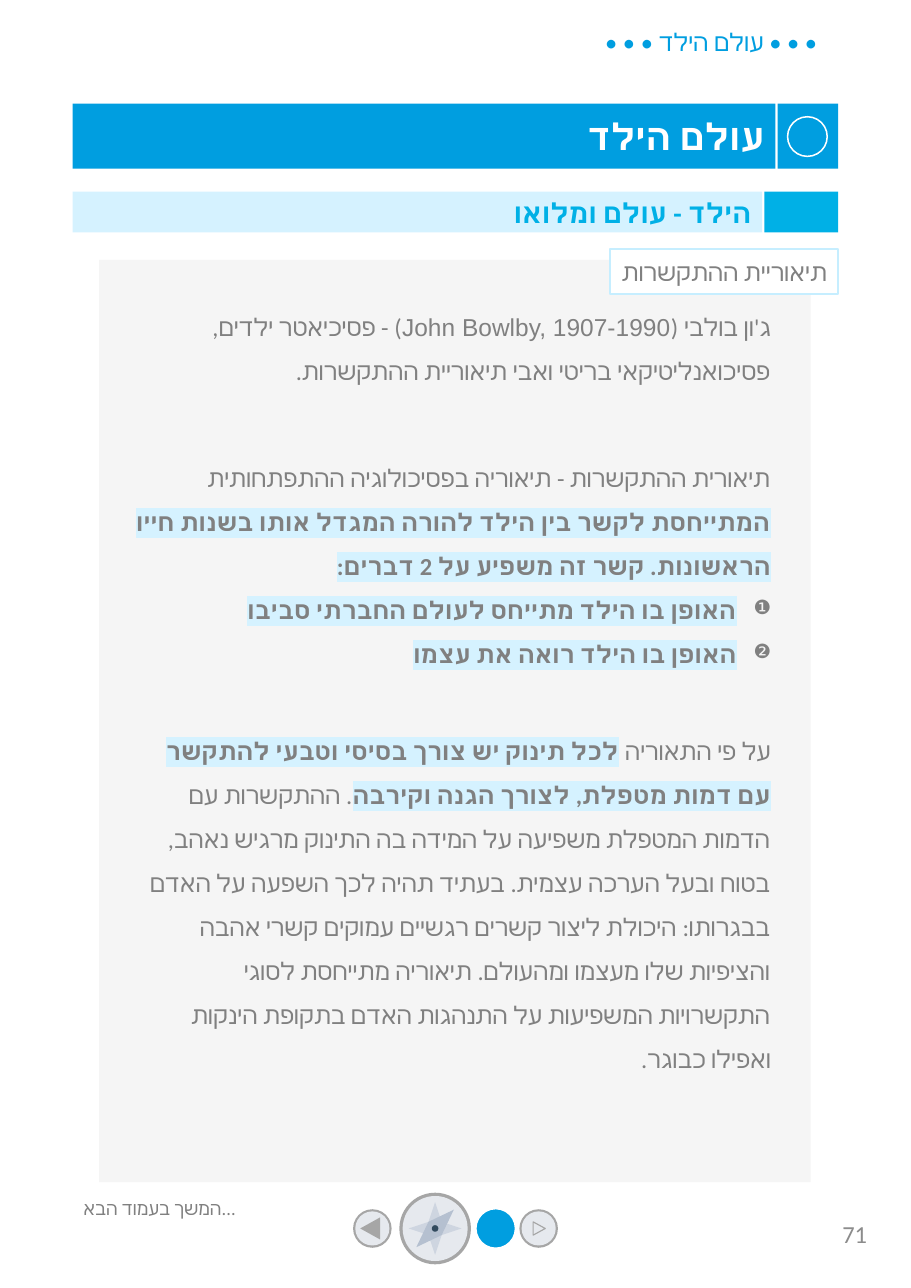
from lxml import etree
from pptx import Presentation
from pptx.dml.color import RGBColor
from pptx.enum.shapes import MSO_SHAPE
from pptx.enum.text import MSO_ANCHOR, MSO_AUTO_SIZE, PP_ALIGN
from pptx.oxml.ns import qn
from pptx.util import Inches, Pt

RECT, OVAL = MSO_SHAPE.RECTANGLE, MSO_SHAPE.OVAL
TOP, MIDDLE = MSO_ANCHOR.TOP, MSO_ANCHOR.MIDDLE
LEFT, RIGHT = PP_ALIGN.LEFT, PP_ALIGN.RIGHT
NO_FIT = MSO_AUTO_SIZE.NONE

# Palette and fonts
BLUE, CYAN, PALE, WHITE = "009EE0", "00B0E6", "D5F2FF", "FFFFFF"
TEXT, PANEL, RING, DISC = "808080", "F5F5F5", "A6A6A6", "E6E9EE"
MONO, BODY, LATIN = "Noto Sans Mono", "Calibri", "Arial"
# Letter spacing in hundredths of a point
PLAIN_SPACING, BOLD_SPACING = 5, 8

# Content
HEADER = "• • • עולם הילד • • •"
TITLE = "עולם הילד"
SUBTITLE = "הילד - עולם ומלואו"
TOPIC = "תיאוריית ההתקשרות"
CONTINUED = "המשך בעמוד הבא..."
PAGE_NUMBER = "71"
# Paragraphs: bullet, space after, runs of (text, font, highlighted)
THEORY = [
    ("", 41, [
        ("ג'ון בולבי (", BODY, False),
        ("John Bowlby, 1907-1990) - פסיכיאטר ילדים, פסיכואנליטיקאי בריטי "
         "ואבי תיאוריית ההתקשרות.", LATIN, False)]),
    ("", 0, [
        ("תיאורית ההתקשרות - תיאוריה בפסיכולוגיה ההתפתחותית ", LATIN, False),
        ("המתייחסת לקשר בין הילד להורה המגדל אותו בשנות חייו הראשונות. "
         "קשר זה משפיע על 2 דברים:", LATIN, True)]),
    ("❶", 0, [("האופן בו הילד מתייחס לעולם החברתי סביבו", LATIN, True)]),
    ("❷", 34.5, [("האופן בו הילד רואה את עצמו", LATIN, True)]),
    ("", 0, [
        ("על פי התאוריה ", LATIN, False),
        ("לכל תינוק יש צורך בסיסי וטבעי להתקשר עם דמות מטפלת, "
         "לצורך הגנה וקירבה", LATIN, True),
        (". ההתקשרות עם הדמות המטפלת משפיעה על המידה בה התינוק מרגיש נאהב, "
         "בטוח ובעל הערכה עצמית. בעתיד תהיה לכך השפעה על האדם בבגרותו: "
         "היכולת ליצור קשרים רגשיים עמוקים קשרי אהבה והציפיות שלו מעצמו "
         "ומהעולם. תיאוריה מתייחסת לסוגי התקשרויות המשפיעות על התנהגות האדם "
         "בתקופת הינקות ואפילו כבוגר.", LATIN, False)]),
]

# Page grid
PAGE_W, PAGE_H = 8.27, 11.69
EDGE_L, EDGE_R = 0.66, 7.61
GAP = 0.02
TITLE_Y, TITLE_H, TITLE_MARK = 0.94, 0.59, 0.55
SUB_Y, SUB_H, SUB_MARK = 1.74, 0.37, 0.67
NAV_Y = 11.15
BACK_X, COMPASS_X, DOT_X, NEXT_X = 3.38, 3.95, 4.5, 4.89
LARGE_RINGS, SMALL_RINGS = (0.73, 0.65, 0.59), (0.39, 0.35, 0.31)

# Navigation outlines, as offsets from the button centre
STAR = [(-.06, .06), (0, .24), (.06, .06), (.24, 0),
        (.06, -.06), (0, -.24), (-.06, -.06), (-.24, 0)]
NEEDLE = [(-.06, -.06), (-.17, .17), (.06, .06), (.17, -.17)]
BACK_ARROW = [(-.11, 0), (.07, .1), (.07, -.1)]
NEXT_ARROW = [(.06, 0), (-.05, .06), (-.05, -.06)]


def color(value):
    return RGBColor.from_string(value)


def paint(shape, fill=None, line=None, weight=1):
    shape.shadow.inherit = False
    if fill:
        shape.fill.solid()
        shape.fill.fore_color.rgb = color(fill)
    else:
        shape.fill.background()
    if line:
        shape.line.color.rgb = color(line)
        shape.line.width = Pt(weight)
    else:
        shape.line.fill.background()
    return shape


def add_box(x, y, w, h, fill, line=None, kind=RECT):
    box = slide.shapes.add_shape(kind, Inches(x), Inches(y), Inches(w), Inches(h))
    return paint(box, fill, line)


def add_text_box(x, y, w, h):
    return slide.shapes.add_textbox(Inches(x), Inches(y), Inches(w), Inches(h))


def add_disc(x, diameter, fill, line=None):
    add_box(x - diameter / 2, NAV_Y - diameter / 2, diameter, diameter, fill, line, OVAL)


def add_outline(x, offsets, fill=None, line=None):
    points = [(Inches(x + dx), Inches(NAV_Y + dy)) for dx, dy in offsets]
    builder = slide.shapes.build_freeform(*points[0])
    builder.add_line_segments(points[1:], close=True)
    paint(builder.convert_to_shape(), fill, line, 0.75)


def add_span(para, text, size, font, ink, bold=False, highlight=None):
    span = para.add_run()
    span.text = text
    span.font.size = Pt(size)
    span.font.bold = bold
    span.font.color.rgb = color(ink)
    span.font.name = font
    props = span.font._element
    props.set("spc", str(BOLD_SPACING if bold else PLAIN_SPACING))
    if highlight:
        mark = etree.Element(qn("a:highlight"))
        etree.SubElement(mark, qn("a:srgbClr"), val=highlight)
        props.find(qn("a:solidFill")).addnext(mark)
    etree.SubElement(props, qn("a:cs"), typeface=BODY)


def set_direction(para, align, rtl=True):
    para.alignment = align
    para._p.get_or_add_pPr().set("rtl", "1" if rtl else "0")


def write(box, text, size, font, ink, bold=False, align=RIGHT, rtl=True, anchor=MIDDLE):
    frame = box.text_frame
    frame.word_wrap = True
    frame.auto_size = NO_FIT
    frame.vertical_anchor = anchor
    para = frame.paragraphs[0]
    set_direction(para, align, rtl)
    add_span(para, text, size, font, ink, bold)


def write_theory(box):
    frame = box.text_frame
    frame.word_wrap = True
    for index, (bullet, after, spans) in enumerate(THEORY):
        para = frame.add_paragraph() if index else frame.paragraphs[0]
        set_direction(para, RIGHT)
        if bullet:
            props = para._p.get_or_add_pPr()
            props.set("marL", str(Inches(0.31)))
            props.set("indent", str(-Inches(0.31)))
            etree.SubElement(props, qn("a:buSzPct"), val="80000")
            etree.SubElement(props, qn("a:buChar"), char=bullet)
        para.line_spacing = 1.5
        para.space_after = Pt(after)
        for text, font, marked in spans:
            add_span(para, text, 16, font, TEXT, marked, PALE if marked else None)


deck = Presentation()
deck.slide_width, deck.slide_height = Inches(PAGE_W), Inches(PAGE_H)
slide = deck.slides.add_slide(deck.slide_layouts[5])

# Title band with its marker
title = slide.shapes.title
title.left, title.top = Inches(EDGE_L), Inches(TITLE_Y)
title.width = Inches(EDGE_R - EDGE_L - TITLE_MARK - GAP)
title.height = Inches(TITLE_H)
title.fill.solid()
title.fill.fore_color.rgb = color(BLUE)
write(title, TITLE, 24, MONO, WHITE, bold=True)
add_box(EDGE_R - TITLE_MARK, TITLE_Y, TITLE_MARK, TITLE_H, BLUE)
add_box(7.15, 1.06, 0.36, 0.36, BLUE, WHITE, OVAL)

# Running header
write(add_text_box(4.72, 0.2, 2.8, 0.37), HEADER, 16, BODY, BLUE, anchor=TOP)

# Navigation buttons
for x, rings in ((COMPASS_X, LARGE_RINGS), (NEXT_X, SMALL_RINGS), (BACK_X, SMALL_RINGS)):
    for diameter, fill in zip(rings, (WHITE, RING, DISC)):
        add_disc(x, diameter, fill)
add_outline(COMPASS_X, STAR, "CED5E0")
add_outline(COMPASS_X, NEEDLE, "B5C0D0")
add_disc(COMPASS_X, 0.06, "324A5E")
add_outline(NEXT_X, NEXT_ARROW, line=RING)
add_outline(BACK_X, BACK_ARROW, RING)
add_disc(DOT_X, 0.36, BLUE, WHITE)

# Theory panel
add_box(0.9, 2.36, 6.46, 8.37, PANEL)
write_theory(add_text_box(1.07, 2.65, 6.03, 6.77))

# Subtitle band and topic label
add_box(EDGE_R - SUB_MARK, SUB_Y, SUB_MARK, SUB_H, CYAN)
subtitle = add_box(EDGE_L, SUB_Y, EDGE_R - EDGE_L - SUB_MARK - GAP, SUB_H, PALE)
write(subtitle, SUBTITLE, 18, BODY, CYAN, bold=True, rtl=False)
topic = add_box(5.54, 2.26, 2.07, 0.41, WHITE, "C6EEFF")
write(topic, TOPIC, 16, BODY, TEXT)

# Footer
write(add_text_box(EDGE_L, 10.82, 2.24, 0.3), CONTINUED, 12, BODY, TEXT,
      align=LEFT, rtl=False, anchor=TOP)
write(add_text_box(7.38, 10.89, 0.59, 0.62), PAGE_NUMBER, 16, BODY, "8C8C8C", rtl=False)

deck.save("out.pptx")
